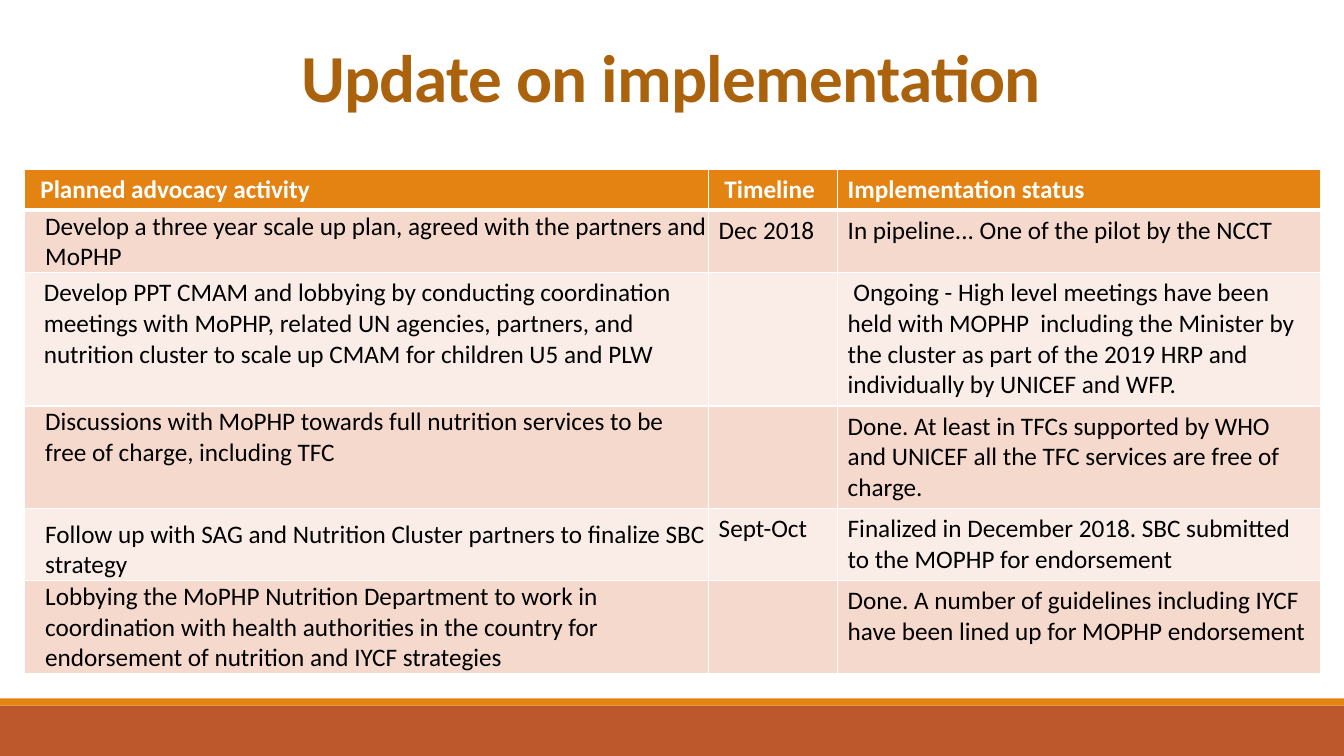
from dataclasses import dataclass

from lxml import etree
from pptx import Presentation
from pptx.dml.color import RGBColor
from pptx.enum.shapes import MSO_SHAPE
from pptx.enum.text import MSO_ANCHOR
from pptx.oxml.ns import qn
from pptx.util import Cm, Pt

RECTANGLE = MSO_SHAPE.RECTANGLE
TOP, BOTTOM = MSO_ANCHOR.TOP, MSO_ANCHOR.BOTTOM


@dataclass(frozen=True)
class Theme:
    font: str = "Calibri"
    title_size: int = 48
    body_size: int = 18
    title: str = "AB620D"
    orange: str = "E48312"
    rust: str = "BD582C"
    band_dark: str = "F5D9CC"
    band_light: str = "FAEDE7"
    white: str = "FFFFFF"
    black: str = "000000"


THEME = Theme()
SLIDE_W, SLIDE_H = 33.87, 19.05

# Table content
HEADINGS = [" Planned advocacy activity", " Timeline", "Implementation status"]
ACTIVITIES = [
    ("Develop a three year scale up plan, agreed with the partners and MoPHP",
     "Dec 2018", "In pipeline... One of the pilot by the NCCT"),
    ("Develop PPT CMAM and lobbying by conducting coordination meetings with MoPHP, "
     "related UN agencies, partners, and nutrition cluster to scale up CMAM for "
     "children U5 and PLW",
     "", " Ongoing - High level meetings have been held with MOPHP  including the "
     "Minister by the cluster as part of the 2019 HRP and individually by UNICEF and WFP."),
    ("Discussions with MoPHP towards full nutrition services to be free of charge, "
     "including TFC",
     "", "Done. At least in TFCs supported by WHO and UNICEF all the TFC services "
     "are free of charge."),
    ("Follow up with SAG and Nutrition Cluster partners to finalize SBC strategy",
     "Sept-Oct", "Finalized in December 2018. SBC submitted to the MOPHP for endorsement"),
    ("Lobbying the MoPHP Nutrition Department to work in coordination with health "
     "authorities in the country for endorsement of nutrition and IYCF strategies",
     "", "Done. A number of guidelines including IYCF have been lined up for "
     "MOPHP endorsement"),
]
COLUMN_WIDTHS = [17.24, 3.25, 12.16]
ROW_HEIGHTS = [1.04, 1.57, 3.36, 2.58, 1.82, 2.34]
# Anchor, left indent and tight margins of each activity cell
ACTIVITY_FORMATS = [
    (BOTTOM, 0.5, True), (TOP, 0.23, False), (TOP, 0.5, True),
    (BOTTOM, 0.5, True), (BOTTOM, 0.5, True),
]


def write_text(frame, text, *, size=THEME.body_size, color=THEME.black, bold=False,
               line_spacing=None, tracking=None, indent=0):
    frame.word_wrap = True
    paragraph = frame.paragraphs[0]
    paragraph.font.size = Pt(size)
    if line_spacing:
        paragraph.line_spacing = line_spacing
    if indent:
        paragraph._p.get_or_add_pPr().set("marL", str(Cm(indent)))
    if not text:
        return
    run = paragraph.add_run()
    run.text = text
    run.font.name = THEME.font
    run.font.size = Pt(size)
    run.font.bold = bold
    run.font.color.rgb = RGBColor.from_string(color)
    if tracking is not None:
        run._r.get_or_add_rPr().set("spc", str(int(tracking * 100)))


def set_borders(cell, top=1, bottom=1):
    properties = cell._tc.get_or_add_tcPr()
    for side, width in (("L", 1), ("R", 1), ("T", top), ("B", bottom)):
        line = etree.SubElement(properties, qn(f"a:ln{side}"), w=str(Pt(width)))
        fill = etree.SubElement(line, qn("a:solidFill"))
        etree.SubElement(fill, qn("a:srgbClr"), val=THEME.white)


def fill_cell(cell, color):
    cell.fill.solid()
    cell.fill.fore_color.rgb = RGBColor.from_string(color)


def add_footer(slide, left, top, width, height):
    stripe_height = 0.18
    bands = [(top + stripe_height, height - stripe_height, THEME.rust),
             (top, stripe_height, THEME.orange)]
    for band_top, band_height, color in bands:
        band = slide.shapes.add_shape(RECTANGLE, Cm(left), Cm(band_top),
                                      Cm(width), Cm(band_height))
        band.shadow.inherit = False
        band.fill.solid()
        band.fill.fore_color.rgb = RGBColor.from_string(color)
        band.line.fill.background()


def add_title(slide, left, top, width, height):
    title = slide.shapes.add_textbox(Cm(left), Cm(top), Cm(width), Cm(height))
    title.text_frame.vertical_anchor = BOTTOM
    write_text(title.text_frame, "Update on implementation", size=THEME.title_size,
               color=THEME.title, bold=True, line_spacing=0.85, tracking=-0.5)


def add_activity_table(slide, left, top, width, height):
    table = slide.shapes.add_table(len(ROW_HEIGHTS), len(COLUMN_WIDTHS), Cm(left),
                                   Cm(top), Cm(width), Cm(height)).table
    for column, column_width in zip(table.columns, COLUMN_WIDTHS):
        column.width = Cm(column_width)
    for row, row_height in zip(table.rows, ROW_HEIGHTS):
        row.height = Cm(row_height)

    # Header row
    for cell, heading in zip(table.rows[0].cells, HEADINGS):
        set_borders(cell, bottom=3)
        fill_cell(cell, THEME.orange)
        write_text(cell.text_frame, heading, color=THEME.white, bold=True)

    # Activity rows in alternating bands
    for number, (activity, style) in enumerate(zip(ACTIVITIES, ACTIVITY_FORMATS), 1):
        anchor, indent, tight = style
        band = THEME.band_dark if number % 2 else THEME.band_light
        for column, text in enumerate(activity):
            cell = table.cell(number, column)
            set_borders(cell, top=3 if number == 1 else 1)
            fill_cell(cell, band)
            write_text(cell.text_frame, text, indent=0 if column else indent)
        activity_cell = table.cell(number, 0)
        activity_cell.vertical_anchor = anchor
        if tight:
            activity_cell.margin_left = activity_cell.margin_right = Cm(0.02)
            activity_cell.margin_top, activity_cell.margin_bottom = Cm(0.02), Cm(0)


def main():
    deck = Presentation()
    deck.slide_width, deck.slide_height = Cm(SLIDE_W), Cm(SLIDE_H)
    slide = deck.slides.add_slide(deck.slide_layouts[6])
    footer_height = 1.45
    add_footer(slide, 0, SLIDE_H - footer_height, SLIDE_W, footer_height)
    add_title(slide, 7.34, 0.64, 20.22, 2.41)
    add_activity_table(slide, 0.62, 4.26, sum(COLUMN_WIDTHS), sum(ROW_HEIGHTS))
    deck.save("out.pptx")


if __name__ == "__main__":
    main()
